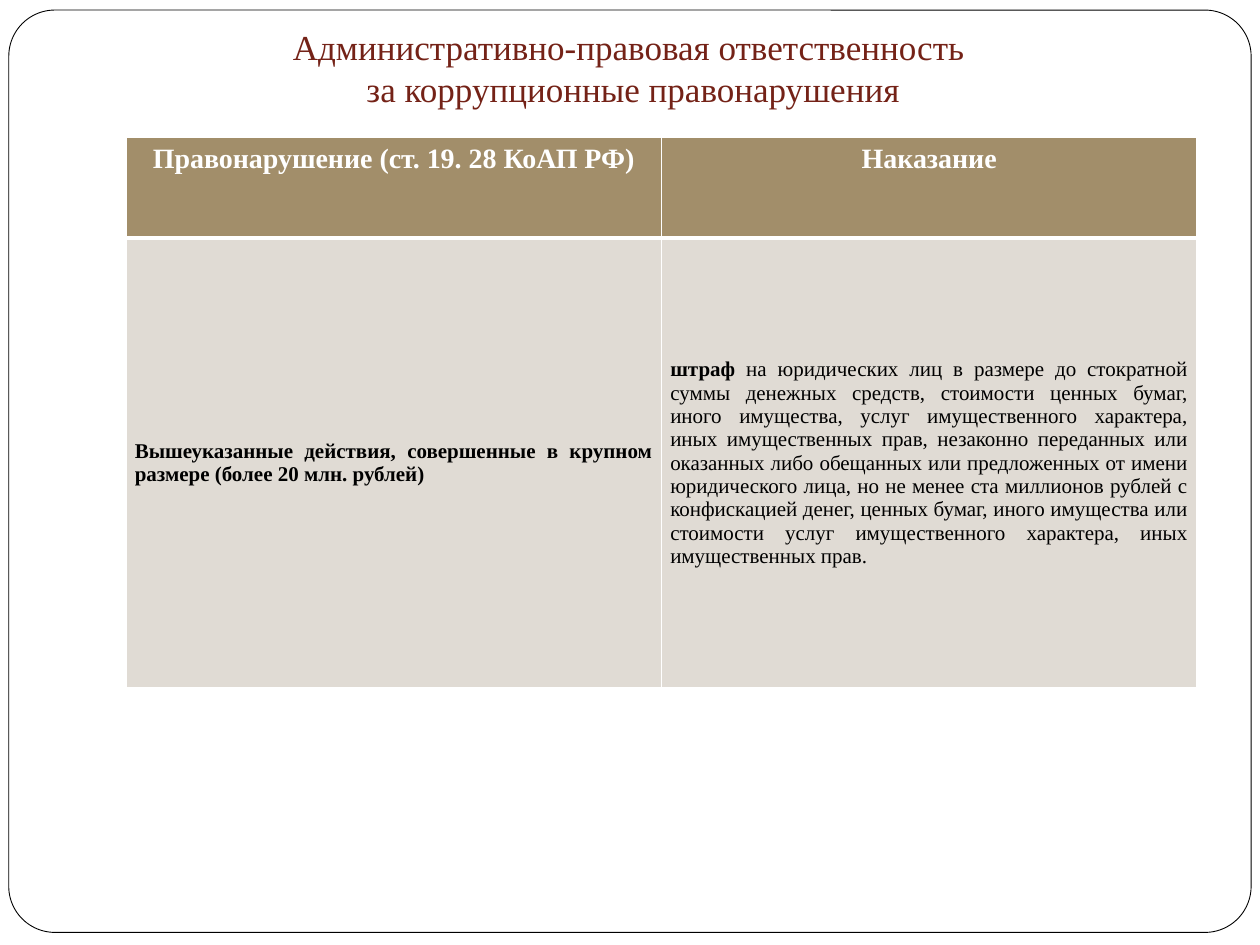
from lxml import etree
from pptx import Presentation
from pptx.dml.color import RGBColor
from pptx.enum import shapes, text
from pptx.oxml import ns
from pptx.util import Inches, Pt

FONT = "Times New Roman"
WHITE, BLACK, TITLE_RED = "FFFFFF", "000000", "742217"
TITLE = "Административно-правовая ответственность \vза коррупционные правонарушения"

# Each cell is a list of (words, bold)
HEADER = [
    [("Правонарушение (ст. 19. 28 КоАП РФ)", True)],
    [("Наказание", True)],
]
BODY = [
    [("Вышеуказанные действия, совершенные в крупном размере (более 20 млн. рублей)", True)],
    [("штраф", True),
     (" на юридических лиц в размере до стократной суммы денежных средств, "
      "стоимости ценных бумаг, иного имущества, услуг имущественного характера, "
      "иных имущественных прав, незаконно переданных или оказанных либо обещанных "
      "или предложенных от имени юридического лица, но не менее ста миллионов рублей "
      "с конфискацией денег, ценных бумаг, иного имущества или стоимости услуг "
      "имущественного характера, иных имущественных прав.", False)],
]
ROWS = [
    dict(cells=HEADER, height=0.8, fill="A28E6A", color=WHITE, size=16,
         align=text.PP_ALIGN.CENTER, anchor=text.MSO_ANCHOR.TOP,
         margins=(0.09, 0.05), borders=dict(L=1, R=1, T=1, B=3)),
    dict(cells=BODY, height=3.57, fill="E0DBD4", color=BLACK, size=12,
         align=text.PP_ALIGN.JUSTIFY, anchor=text.MSO_ANCHOR.MIDDLE,
         margins=(0.07, 0), borders=dict(L=1, R=1, T=3, B=1)),
]
COLUMN_WIDTH = 4.25


def rgb(value):
    return RGBColor.from_string(value)


def style_run(run, size, color, bold=False):
    run.font.name, run.font.size, run.font.bold = FONT, Pt(size), bold
    run.font.color.rgb = rgb(color)


def set_borders(cell, widths):
    """Draw white cell edges; they must precede the fill in the cell properties."""
    properties = cell._tc.get_or_add_tcPr()
    for position, (side, width) in enumerate(widths.items()):
        edge = etree.Element(ns.qn(f"a:ln{side}"), w=str(Pt(width)))
        fill = etree.SubElement(edge, ns.qn("a:solidFill"))
        etree.SubElement(fill, ns.qn("a:srgbClr"), val=WHITE)
        properties.insert(position, edge)


def fill_cell(cell, parts, row):
    cell.fill.solid()
    cell.fill.fore_color.rgb = rgb(row["fill"])
    set_borders(cell, row["borders"])
    side, end = (Inches(margin) for margin in row["margins"])
    cell.margin_left = cell.margin_right = side
    cell.margin_top = cell.margin_bottom = end
    cell.vertical_anchor = row["anchor"]
    paragraph = cell.text_frame.paragraphs[0]
    paragraph.alignment = row["align"]
    for words, bold in parts:
        run = paragraph.add_run()
        run.text = words
        style_run(run, row["size"], row["color"], bold)


def add_frame(slide):
    frame = slide.shapes.add_shape(
        shapes.MSO_SHAPE.ROUNDED_RECTANGLE,
        Inches(0.07), Inches(0.08), Inches(9.86), Inches(7.32))
    frame.adjustments[0] = 0.05
    frame.shadow.inherit = False
    frame.fill.solid()
    frame.fill.fore_color.rgb = rgb(WHITE)
    frame.line.color.rgb = rgb(BLACK)
    frame.line.width = Pt(0.5)


def add_title(slide):
    box = slide.shapes.add_textbox(Inches(0.55), Inches(0.39), Inches(8.95), Inches(0.58))
    title = box.text_frame
    title.word_wrap = True
    title.vertical_anchor = text.MSO_ANCHOR.BOTTOM
    title.margin_bottom = Inches(0.1)
    title.text = TITLE
    paragraph = title.paragraphs[0]
    paragraph.alignment = text.PP_ALIGN.CENTER
    for run in paragraph.runs:
        style_run(run, 20, TITLE_RED)


def add_penalties(slide):
    columns = len(HEADER)
    height = sum(row["height"] for row in ROWS)
    table = slide.shapes.add_table(
        len(ROWS), columns, Inches(1), Inches(1.09),
        Inches(columns * COLUMN_WIDTH), Inches(height)).table
    table.horz_banding = False
    for r, row in enumerate(ROWS):
        table.rows[r].height = Inches(row["height"])
        for c, parts in enumerate(row["cells"]):
            fill_cell(table.cell(r, c), parts, row)


def main():
    deck = Presentation()
    deck.slide_width, deck.slide_height = Inches(10), Inches(7.5)
    slide = deck.slides.add_slide(deck.slide_layouts[6])
    add_frame(slide)
    add_penalties(slide)
    add_title(slide)
    deck.save("out.pptx")


if __name__ == "__main__":
    main()
